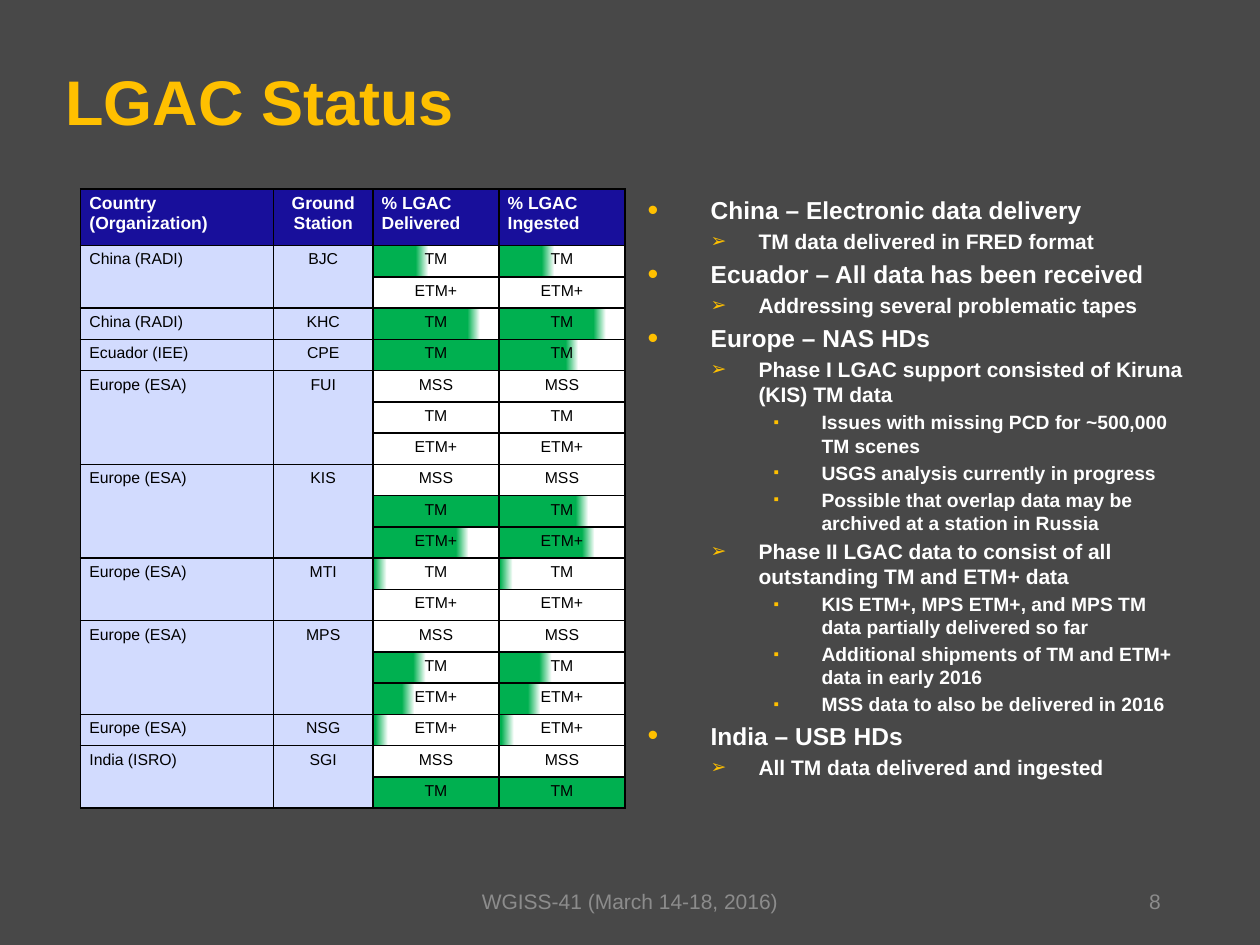
from lxml import etree
from pptx import Presentation
from pptx.dml.color import RGBColor
from pptx.enum import text
from pptx.oxml import ns
from pptx.util import Inches, Pt

COLORS = {"page": "484848", "gold": "FFC000", "white": "FFFFFF", "black": "000000",
          "navy": "180F9B", "pale": "D2DBFE", "green": "00B050", "gray": "8C8C8C"}
LEFT, CENTER, RIGHT = text.PP_ALIGN.LEFT, text.PP_ALIGN.CENTER, text.PP_ALIGN.RIGHT

TITLE = "LGAC Status"
HEADINGS = ["Country (Organization)", "Ground Station", "% LGAC Delivered", "% LGAC Ingested"]
STATIONS = [
    ("China (RADI)", "BJC", [("TM", 34, 34), ("ETM+", 0, 0)]),
    ("China (RADI)", "KHC", [("TM", 75, 75)]),
    ("Ecuador (IEE)", "CPE", [("TM", 100, 53)]),
    ("Europe (ESA)", "FUI", [("MSS", 0, 0), ("TM", 0, 0), ("ETM+", 0, 0)]),
    ("Europe (ESA)", "KIS", [("MSS", 0, 0), ("TM", 100, 61), ("ETM+", 66, 66)]),
    ("Europe (ESA)", "MTI", [("TM", 1, 1), ("ETM+", 0, 0)]),
    ("Europe (ESA)", "MPS", [("MSS", 0, 0), ("TM", 32, 32), ("ETM+", 23, 23)]),
    ("Europe (ESA)", "NSG", [("ETM+", 2, 2)]),
    ("India (ISRO)", "SGI", [("MSS", 0, 0), ("TM", 100, 100)]),
]
NOTES = [
    (0, "China – Electronic data delivery"),
    (1, "TM data delivered in FRED format"),
    (0, "Ecuador – All data has been received"),
    (1, "Addressing several problematic tapes"),
    (0, "Europe – NAS HDs"),
    (1, "Phase I LGAC support consisted of Kiruna (KIS) TM data"),
    (2, "Issues with missing PCD for ~500,000 TM scenes"),
    (2, "USGS analysis currently in progress"),
    (2, "Possible that overlap data may be archived at a station in Russia"),
    (1, "Phase II LGAC data to consist of all outstanding TM and ETM+ data"),
    (2, "KIS ETM+, MPS ETM+, and MPS TM data partially delivered so far"),
    (2, "Additional shipments of TM and ETM+ data in early 2016"),
    (2, "MSS data to also be delivered in 2016"),
    (0, "India – USB HDs"),
    (1, "All TM data delivered and ingested"),
]
LEVELS = [
    {"size": 14, "left": 0.5, "hang": 0.5, "bullet": "•", "percent": 125},
    {"size": 12, "left": 0.88, "hang": 0.38, "bullet": "➢", "percent": 90},
    {"size": 11, "left": 1.38, "hang": 0.38, "bullet": "▪", "percent": 80},
]
FOOTERS = [("WGISS-41 (March 14-18, 2016)", (3.31, 6.95, 3.38, 0.4), CENTER),
           ("8", (7.06, 6.95, 2.25, 0.4), RIGHT)]
TABLE_BOX = (0.64, 1.5, 4.33, 4.92)
COLUMNS = [1.53, 0.79, 1, 1]
HEADER_HEIGHT = 0.45
FADE = 10


def rgb(name):
    return RGBColor.from_string(COLORS[name])


def assign(target, values):
    for name, value in values.items():
        setattr(target, name, value)


def place(shape, box):
    assign(shape, dict(zip(("left", "top", "width", "height"), map(Inches, box))))


def write(paragraph, words, size, color, bold=False, align=LEFT):
    paragraph.alignment = align
    run = paragraph.add_run()
    run.text = words
    assign(run.font, {"name": "Arial", "size": Pt(size), "bold": bold})
    run.font.color.rgb = rgb(color)


def add_child(parent, tag, **attributes):
    return etree.SubElement(parent, ns.qn(tag), attributes)


def add_bullet(paragraph, level):
    props = paragraph._p.get_or_add_pPr()
    props.set("marL", str(Inches(level["left"])))
    props.set("indent", str(-Inches(level["hang"])))
    add_child(add_child(props, "a:buClr"), "a:srgbClr", val=COLORS["gold"])
    add_child(props, "a:buSzPct", val=str(level["percent"] * 1000))
    add_child(props, "a:buFont", typeface="Arial")
    add_child(props, "a:buChar", char=level["bullet"])


def style_cell(cell, percent=None, color="pale"):
    assign(cell, {"margin_left": Inches(0.07), "margin_right": Inches(0.07),
                  "margin_top": Inches(0.04), "margin_bottom": Inches(0.04)})
    props = cell._tc.get_or_add_tcPr()
    for side in "LRTB":
        border = add_child(props, f"a:ln{side}", w=str(Pt(1)))
        add_child(add_child(border, "a:solidFill"), "a:srgbClr", val=COLORS["black"])
    if percent in (None, 0, 100):
        cell.fill.solid()
        cell.fill.fore_color.rgb = rgb({None: color, 0: "white", 100: "green"}[percent])
        return
    cell.fill.gradient()
    cell.fill.gradient_angle = 0
    ends = [(percent, "green"), (percent + FADE, "white")]
    for stop, (position, name) in zip(cell.fill.gradient_stops, ends):
        stop.position = position / 100
        stop.color.rgb = rgb(name)


def add_status_table(slide):
    row_count = sum(len(sensors) for _, _, sensors in STATIONS)
    table = slide.shapes.add_table(row_count + 1, len(COLUMNS), *map(Inches, TABLE_BOX)).table
    assign(table, {"first_row": False, "horz_banding": False})
    for column, width in zip(table.columns, COLUMNS):
        column.width = Inches(width)
    for row in table.rows:
        row.height = Inches((TABLE_BOX[3] - HEADER_HEIGHT) / row_count)
    table.rows[0].height = Inches(HEADER_HEIGHT)

    for index, heading in enumerate(HEADINGS):
        cell = table.cell(0, index)
        style_cell(cell, color="navy")
        write(cell.text_frame.paragraphs[0], heading, 10, "white", True,
              CENTER if index == 1 else LEFT)

    first = 1
    for country, station, sensors in STATIONS:
        last = first + len(sensors) - 1
        for row, (sensor, *percents) in enumerate(sensors, first):
            for column in (0, 1):
                style_cell(table.cell(row, column))
            for column, percent in enumerate(percents, 2):
                cell = table.cell(row, column)
                style_cell(cell, percent)
                write(cell.text_frame.paragraphs[0], sensor, 9, "black", align=CENTER)
        for column, (words, align) in enumerate([(country, LEFT), (station, CENTER)]):
            cell = table.cell(first, column)
            write(cell.text_frame.paragraphs[0], words, 9, "black", align=align)
            if last > first:
                cell.merge(table.cell(last, column))
        first = last + 1


def add_notes(body):
    place(body, (5.04, 1.5, 4.46, 4.92))
    frame = body.text_frame
    assign(frame, {"word_wrap": True, "auto_size": text.MSO_AUTO_SIZE.NONE})
    for index, (depth, words) in enumerate(NOTES):
        paragraph = frame.add_paragraph() if index else frame.paragraphs[0]
        paragraph.level = depth
        if not index:
            paragraph.space_before = Pt(0)
        add_bullet(paragraph, LEVELS[depth])
        write(paragraph, words, LEVELS[depth]["size"], "white", True)


def main():
    """Build the LGAC status slide."""
    deck = Presentation()
    assign(deck, {"slide_width": Inches(10), "slide_height": Inches(7.5)})
    slide = deck.slides.add_slide(deck.slide_layouts[1])
    slide.background.fill.solid()
    slide.background.fill.fore_color.rgb = rgb("page")

    title, body = slide.placeholders
    place(title, (0.42, 0.17, 9.08, 1.25))
    assign(title.text_frame, {"vertical_anchor": text.MSO_ANCHOR.MIDDLE,
                              "auto_size": text.MSO_AUTO_SIZE.NONE})
    write(title.text_frame.paragraphs[0], TITLE, 36, "gold", True)
    add_notes(body)
    add_status_table(slide)

    for words, box, align in FOOTERS:
        frame = slide.shapes.add_textbox(*map(Inches, box)).text_frame
        assign(frame, {"word_wrap": True, "vertical_anchor": text.MSO_ANCHOR.MIDDLE})
        write(frame.paragraphs[0], words, 12, "gray", align=align)
    deck.save("out.pptx")


if __name__ == "__main__":
    main()
